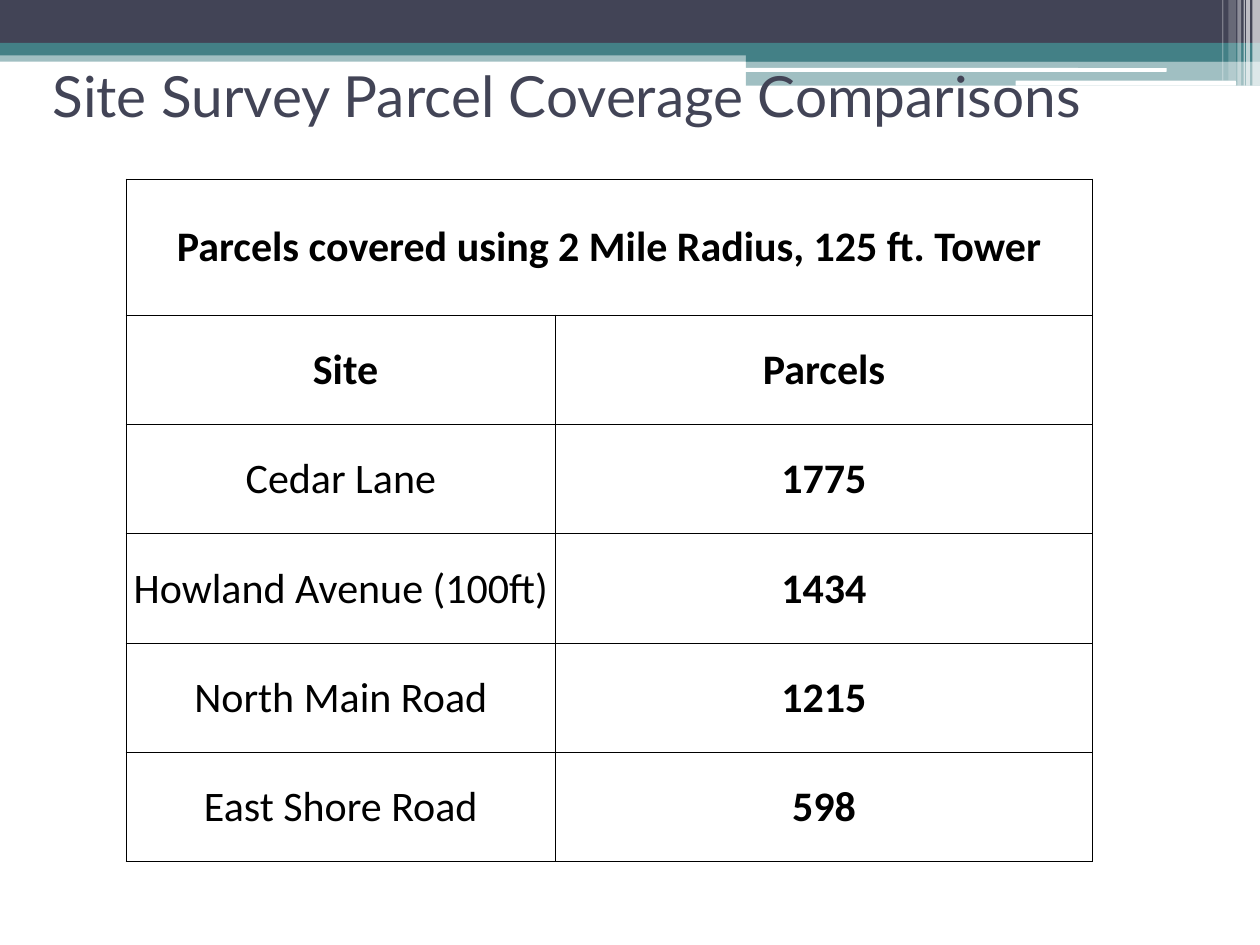
from lxml import etree
from pptx import Presentation
from pptx.dml.color import RGBColor
from pptx.enum import shapes as kinds, text as modes
from pptx.oxml import ns
from pptx.util import Inches, Pt

NAVY, TEAL, WHITE, BLACK = "424456", "438086", "FFFFFF", "000000"
RECT = kinds.MSO_SHAPE.RECTANGLE
ROUND = kinds.MSO_SHAPE.ROUNDED_RECTANGLE

# kind, left, top, width, height, colour, opacity in percent
BANDS = [
    (RECT, 0, 0.4, 10, 0.09, TEAL, 50),
    (RECT, 0, 0, 10, 0.34, NAVY, 100),
    (RECT, 0, 0.34, 10, 0.1, TEAL, 100),
    (RECT, 5.92, 0.39, 4.08, 0.1, TEAL, 100),
    (RECT, 5.92, 0.48, 4.08, 0.2, TEAL, 50),
    (ROUND, 5.91, 0.54, 3.35, 0.03, WHITE, 100),
    (ROUND, 8.06, 0.64, 1.75, 0.04, WHITE, 100),
]
# left, width, height, opacity in percent
STRIPES = [
    (9.94, 0.06, 0.68, 65),
    (9.89, 0.03, 0.68, 65),
    (9.87, 0.01, 0.68, 60),
    (9.82, 0.03, 0.68, 40),
    (9.75, 0.06, 0.64, 20),
    (9.7, 0.01, 0.64, 30),
]
HEADING = "Parcels covered using 2 Mile Radius, 125 ft. Tower"
ROWS = [
    (" Site", "Parcels"),
    ("Cedar Lane", "1775"),
    ("Howland Avenue (100ft)", "1434"),
    ("North Main Road", "1215"),
    ("East Shore Road", "598"),
]


def paint(fill, color):
    fill.solid()
    fill.fore_color.rgb = RGBColor.from_string(color)


def write(frame, words, font, size, color, bold=False):
    """Set one centred paragraph and format its run."""
    frame.text = words
    para = frame.paragraphs[0]
    para.alignment = modes.PP_ALIGN.CENTER
    face = para.runs[0].font
    face.name, face.size, face.bold = font, Pt(size), bold
    face.color.rgb = RGBColor.from_string(color)


def add_bar(slide, kind, x, y, w, h, color, alpha):
    bar = slide.shapes.add_shape(kind, Inches(x), Inches(y), Inches(w), Inches(h))
    bar.shadow.inherit = False
    bar.line.fill.background()
    paint(bar.fill, color)
    if alpha < 100:
        tint = bar.fill._xPr.find(".//" + ns.qn("a:srgbClr"))
        etree.SubElement(tint, ns.qn("a:alpha"), val=str(alpha * 1000))


def add_banner(slide, x, y):
    for kind, dx, dy, w, h, color, alpha in BANDS:
        add_bar(slide, kind, x + dx, y + dy, w, h, color, alpha)
    for dx, w, h, alpha in STRIPES:
        add_bar(slide, RECT, x + dx, y, w, h, WHITE, alpha)


def add_title(slide, x, y, w, h):
    title = slide.shapes.title
    title.left, title.top = Inches(x), Inches(y)
    title.width, title.height = Inches(w), Inches(h)
    frame = title.text_frame
    frame.vertical_anchor = modes.MSO_ANCHOR.MIDDLE
    frame.word_wrap = True
    frame.auto_size = modes.MSO_AUTO_SIZE.NONE
    write(frame, "Site Survey Parcel Coverage Comparisons", "Lato", 32.4, NAVY)
    slide.shapes._spTree.append(title._element)  # in front of the banner


def add_borders(cell):
    props = cell._tc.get_or_add_tcPr()
    for place, side in enumerate(("lnL", "lnR", "lnT", "lnB")):
        line = etree.Element(ns.qn("a:" + side), w=str(Pt(0.5)))
        fill = etree.SubElement(line, ns.qn("a:solidFill"))
        etree.SubElement(fill, ns.qn("a:srgbClr"), val=BLACK)
        props.insert(place, line)


def style_cell(cell):
    cell.fill.background()
    cell.vertical_anchor = modes.MSO_ANCHOR.MIDDLE
    cell.margin_left = cell.margin_right = cell.margin_top = Inches(0.01)
    cell.margin_bottom = 0
    add_borders(cell)


def add_parcels(slide, x, y, w, h):
    count = len(ROWS) + 1
    table = slide.shapes.add_table(
        count, 2, Inches(x), Inches(y), Inches(w), Inches(h)).table
    table.first_row = table.horz_banding = False
    first, top = 3.41, 1.08
    table.columns[0].width = Inches(first)
    table.columns[1].width = Inches(w - first)
    for i, row in enumerate(table.rows):
        row.height = Inches((h - top) / len(ROWS) if i else top)
        for cell in row.cells:
            style_cell(cell)
    head = table.cell(0, 0)
    head.merge(table.cell(0, 1))
    write(head.text_frame, HEADING, "Calibri", 24, BLACK, True)
    for r, pair in enumerate(ROWS, 1):
        for c, words in enumerate(pair):
            bold = r == 1 or c == 1
            write(table.cell(r, c).text_frame, words, "Calibri", 24, BLACK, bold)


def main():
    deck = Presentation()
    deck.slide_width, deck.slide_height = Inches(10), Inches(7.5)
    slide = deck.slides.add_slide(deck.slide_layouts[5])
    paint(slide.background.fill, WHITE)
    add_banner(slide, 0, 0)
    add_title(slide, 0, 0.17, 9, 1.17)
    add_parcels(slide, 1, 1.42, 7.67, 5.42)
    deck.save("out.pptx")


if __name__ == "__main__":
    main()
